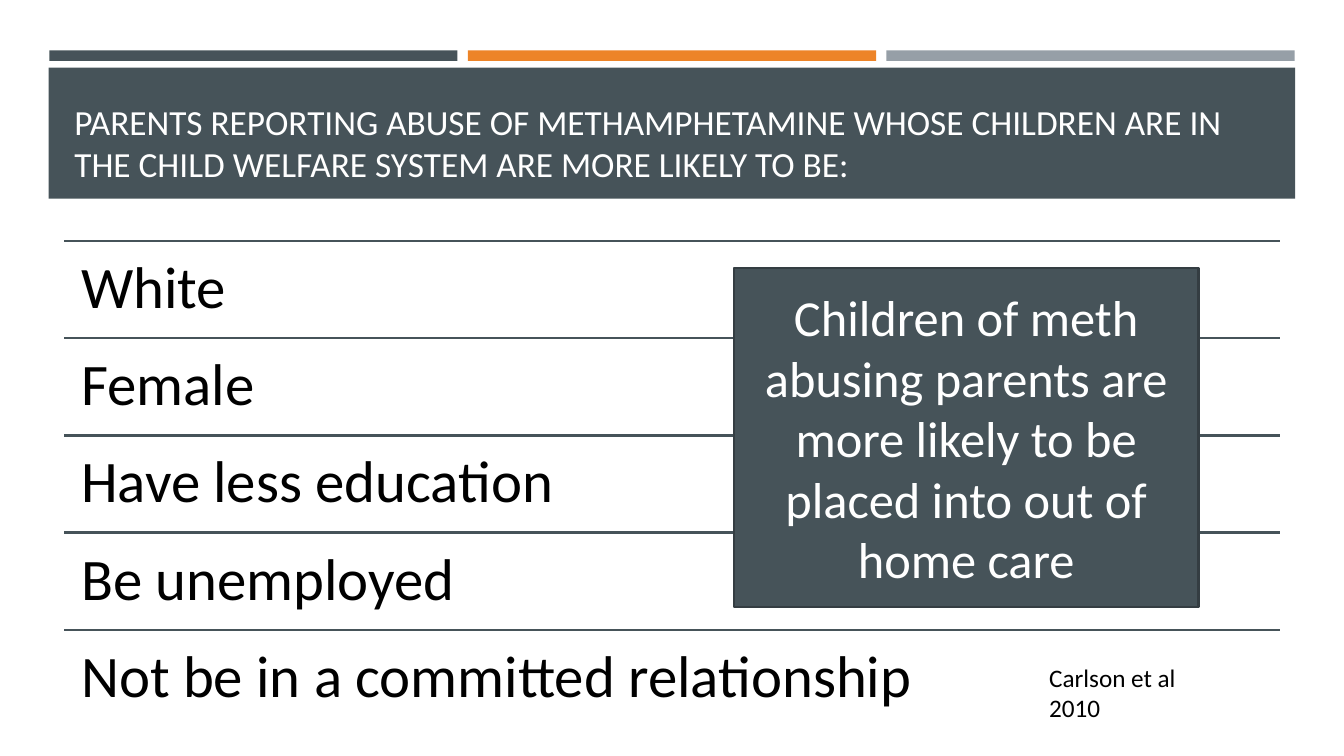
import pptx
import pptx.dml.color
import pptx.enum.shapes
import pptx.enum.text
import pptx.oxml
import pptx.oxml.ns
import pptx.util

Pt = pptx.util.Pt
RGBColor = pptx.dml.color.RGBColor
Anchor = pptx.enum.text.MSO_ANCHOR
Align = pptx.enum.text.PP_ALIGN

SLATE = RGBColor(0x46, 0x53, 0x59)
DARK_SLATE = RGBColor(0x34, 0x3D, 0x42)
ORANGE = RGBColor(0xED, 0x84, 0x28)
GRAY = RGBColor(0x96, 0x9F, 0xA7)
WHITE = RGBColor(0xFF, 0xFF, 0xFF)
BLACK = RGBColor(0, 0, 0)

FONT = "Calibri"
TITLE = ("PARENTS REPORTING ABUSE OF METHAMPHETAMINE WHOSE CHILDREN ARE IN "
         "THE CHILD WELFARE SYSTEM ARE MORE LIKELY TO BE:")
TRAITS = ["White", "Female", "Have less education", "Be unemployed",
          "Not be in a committed relationship"]
CALLOUT = ("Children of meth abusing parents are more likely to be "
           "placed into out of home care")

LIST_LEFT = 46
LIST_TOP = 172
LIST_WIDTH = 868.4
ROW_HEIGHT = 69.5
ROW_INSET = 12


def write_text(shape, text, size, color, anchor=Anchor.TOP, align=Align.LEFT):
    frame = shape.text_frame
    frame.word_wrap = True
    frame.vertical_anchor = anchor
    frame.text = text
    para = frame.paragraphs[0]
    para.alignment = align
    font = para.runs[0].font
    font.name = FONT
    font.size = Pt(size)
    font.color.rgb = color
    return para


def add_text(page, left, top, width, height, text, size, color, anchor=Anchor.TOP):
    box = page.shapes.add_textbox(Pt(left), Pt(top), Pt(width), Pt(height))
    write_text(box, text, size, color, anchor)
    return box


def add_block(page, left, top, width, height, fill, outline=None):
    block = page.shapes.add_shape(
        pptx.enum.shapes.MSO_SHAPE.RECTANGLE,
        Pt(left), Pt(top), Pt(width), Pt(height))
    block.shadow.inherit = False
    block.fill.solid()
    block.fill.fore_color.rgb = fill
    if outline is None:
        block.line.fill.background()
    else:
        block.line.color.rgb = outline
        block.line.width = Pt(1.75)
    return block


def add_rule(page, top):
    rule = page.shapes.add_connector(
        pptx.enum.shapes.MSO_CONNECTOR.STRAIGHT,
        Pt(LIST_LEFT), Pt(top), Pt(LIST_LEFT + LIST_WIDTH), Pt(top))
    rule.line.color.rgb = SLATE
    rule.line.width = Pt(1.75)
    properties = rule._element.spPr
    properties.append(pptx.oxml.parse_xml(
        "<a:effectLst %s/>" % pptx.oxml.ns.nsdecls("a")))


def add_trait(page, top, trait):
    add_rule(page, top)
    box = add_text(page, LIST_LEFT, top, LIST_WIDTH, ROW_HEIGHT, trait, 42, BLACK)
    frame = box.text_frame
    frame.margin_left = frame.margin_right = Pt(ROW_INSET)
    frame.margin_top = frame.margin_bottom = Pt(ROW_INSET)
    frame.paragraphs[0].line_spacing = 0.9


def main():
    deck = pptx.Presentation()
    deck.slide_width = Pt(960)
    deck.slide_height = Pt(540)
    page = deck.slides.add_slide(deck.slide_layouts[6])

    for column, color in enumerate([SLATE, ORANGE, GRAY]):
        add_block(page, 35.2 + column * 299, 36, 291.6, 7.5, color)
    add_block(page, 34.8, 48.4, 890.4, 93.6, SLATE)
    add_text(page, 46, 55.4, 868.4, 80, TITLE, 25.2, WHITE, Anchor.BOTTOM)

    for row, trait in enumerate(TRAITS):
        add_trait(page, LIST_TOP + row * ROW_HEIGHT, trait)

    callout = add_block(page, 524.2, 191.5, 332, 242, SLATE, DARK_SLATE)
    write_text(callout, CALLOUT, 36, WHITE, Anchor.MIDDLE, Align.CENTER)
    add_text(page, 742.3, 469.4, 113.8, 51, "Carlson et al 2010", 18, BLACK)

    deck.save("out.pptx")


if __name__ == "__main__":
    main()
